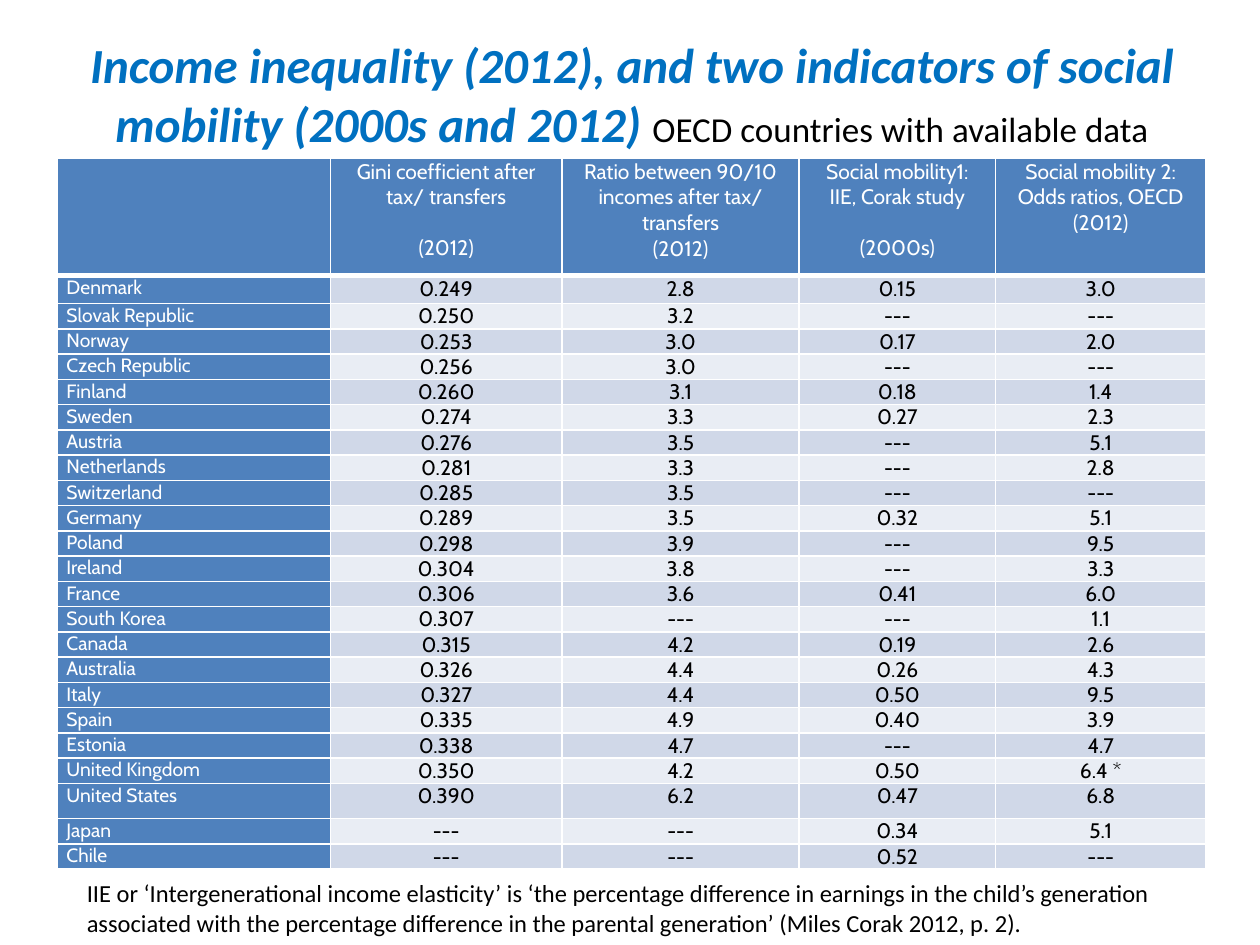
from dataclasses import dataclass

from lxml.etree import SubElement
from pptx import Presentation
from pptx.dml.color import RGBColor
from pptx.enum.text import MSO_ANCHOR, MSO_AUTO_SIZE, PP_ALIGN
from pptx.oxml.ns import qn
from pptx.util import Cm, Pt


@dataclass(frozen=True)
class Theme:
    heading_font: str = "Calibri"
    table_font: str = "Cabin"
    accent: str = "0070C0"
    black: str = "000000"
    white: str = "FFFFFF"
    header_fill: str = "4F81BD"
    bands: tuple = ("D0D8E8", "E9EDF4")
    title_size: float = 28
    subtitle_size: float = 20
    note_size: float = 14
    value_size: float = 12
    country_size: float = 11
    blank_line: float = 14.6
    rule: float = 1
    header_rule: float = 3


THEME = Theme()

TITLE = "Income inequality (2012), and two indicators of social mobility (2000s and 2012) "
SUBTITLE = "OECD countries with available data"
NOTE = (
    "IIE or ‘Intergenerational income elasticity’ is ‘the percentage difference in "
    "earnings in the child’s generation associated with the percentage difference in "
    "the parental generation’ (Miles Corak 2012, p. 2)."
)

# Lines of each column head, and whether a gap precedes the year
HEADS = [
    ([], False),
    (["Gini coefficient after tax/ transfers", "(2012)"], True),
    (["Ratio between 90/10 incomes after tax/ transfers", "(2012)"], False),
    (["Social mobility1:", "IIE, Corak study", "(2000s)"], True),
    (["Social mobility 2:", "Odds ratios, OECD", "(2012)"], False),
]
COUNTRIES = [
    ("Denmark", "0.249", "2.8", "0.15", "3.0"),
    ("Slovak Republic", "0.250", "3.2", "---", "---"),
    ("Norway", "0.253", "3.0", "0.17", "2.0"),
    ("Czech Republic", "0.256", "3.0", "---", "---"),
    ("Finland", "0.260", "3.1", "0.18", "1.4"),
    ("Sweden", "0.274", "3.3", "0.27", "2.3"),
    ("Austria", "0.276", "3.5", "---", "5.1"),
    ("Netherlands", "0.281", "3.3", "---", "2.8"),
    ("Switzerland", "0.285", "3.5", "---", "---"),
    ("Germany", "0.289", "3.5", "0.32", "5.1"),
    ("Poland", "0.298", "3.9", "---", "9.5"),
    ("Ireland", "0.304", "3.8", "---", "3.3"),
    ("France", "0.306", "3.6", "0.41", "6.0"),
    ("South Korea", "0.307", "---", "---", "1.1"),
    ("Canada", "0.315", "4.2", "0.19", "2.6"),
    ("Australia", "0.326", "4.4", "0.26", "4.3"),
    ("Italy", "0.327", "4.4", "0.50", "9.5"),
    ("Spain", "0.335", "4.9", "0.40", "3.9"),
    ("Estonia", "0.338", "4.7", "---", "4.7"),
    ("United Kingdom", "0.350", "4.2", "0.50", "6.4 *"),
    ("United States", "0.390", "6.2", "0.47", "6.8"),
    ("Japan", "---", "---", "0.34", "5.1"),
    ("Chile", "---", "---", "0.52", "---"),
]

COLUMN_WIDTHS = [5.51, 4.67, 4.78, 3.96, 4.24]
HEADER_HEIGHT, ROW_HEIGHT = 2.36, 0.48
TALL_ROWS = {"Denmark": 0.56, "United States": 0.71}


def add_run(paragraph, text, font, size, color, bold=False, italic=False):
    run = paragraph.add_run()
    run.text = text
    run.font.name = font
    run.font.size = Pt(size)
    run.font.bold = bold
    run.font.italic = italic
    run.font.color.rgb = RGBColor.from_string(color)


def place(shape, box):
    shape.left, shape.top, shape.width, shape.height = (Cm(n) for n in box)


def add_title(slide, box):
    title = slide.shapes.title
    place(title, box)
    frame = title.text_frame
    frame.word_wrap = True
    frame.auto_size = MSO_AUTO_SIZE.SHAPE_TO_FIT_TEXT
    frame.vertical_anchor = MSO_ANCHOR.MIDDLE
    line = frame.paragraphs[0]
    line.alignment = PP_ALIGN.CENTER
    add_run(line, TITLE, THEME.heading_font, THEME.title_size, THEME.accent, True, True)
    add_run(line, SUBTITLE, THEME.heading_font, THEME.subtitle_size, THEME.black)


def draw_borders(cell, top, bottom):
    properties = cell._tc.get_or_add_tcPr()
    widths = {"a:lnL": THEME.rule, "a:lnR": THEME.rule, "a:lnT": top, "a:lnB": bottom}
    for tag, width in widths.items():
        border = SubElement(properties, qn(tag), w=str(int(Pt(width))))
        SubElement(SubElement(border, qn("a:solidFill")), qn("a:srgbClr"), val=THEME.white)


def style_cell(cell, fill, top=THEME.rule, bottom=THEME.rule):
    draw_borders(cell, top, bottom)
    cell.fill.solid()
    cell.fill.fore_color.rgb = RGBColor.from_string(fill)
    cell.margin_left = cell.margin_right = Cm(0.19)
    cell.margin_top = cell.margin_bottom = 0


def fill_header(cells):
    for cell, (lines, gap) in zip(cells, HEADS):
        style_cell(cell, THEME.header_fill, bottom=THEME.header_rule)
        frame = cell.text_frame
        for index, text in enumerate(lines):
            line = frame.add_paragraph() if index else frame.paragraphs[0]
            line.alignment = PP_ALIGN.CENTER
            if gap and index == len(lines) - 1:
                line.space_before = Pt(THEME.blank_line)
            add_run(line, text, THEME.table_font, THEME.value_size, THEME.white)


def fill_country(cells, record, number):
    top = THEME.rule if number else THEME.header_rule
    for column, (cell, text) in enumerate(zip(cells, record)):
        line = cell.text_frame.paragraphs[0]
        if column:
            style_cell(cell, THEME.bands[number % 2], top)
            line.alignment = PP_ALIGN.CENTER
            add_run(line, text, THEME.table_font, THEME.value_size, THEME.black)
        else:
            style_cell(cell, THEME.header_fill, top)
            add_run(line, text, THEME.table_font, THEME.country_size, THEME.white)


def add_country_table(slide, left, top):
    heights = [HEADER_HEIGHT] + [TALL_ROWS.get(r[0], ROW_HEIGHT) for r in COUNTRIES]
    table = slide.shapes.add_table(
        len(heights), len(COLUMN_WIDTHS),
        Cm(left), Cm(top), Cm(sum(COLUMN_WIDTHS)), Cm(sum(heights)),
    ).table
    for column, width in zip(table.columns, COLUMN_WIDTHS):
        column.width = Cm(width)
    for row, height in zip(table.rows, heights):
        row.height = Cm(height)
    header, *body = table.rows
    fill_header(header.cells)
    for number, (row, record) in enumerate(zip(body, COUNTRIES)):
        fill_country(row.cells, record, number)


def add_note(slide, box):
    frame = slide.shapes.add_textbox(*(Cm(n) for n in box)).text_frame
    frame.word_wrap = True
    frame.auto_size = MSO_AUTO_SIZE.SHAPE_TO_FIT_TEXT
    add_run(frame.paragraphs[0], NOTE, THEME.heading_font, THEME.note_size, THEME.black)


def main():
    deck = Presentation()
    deck.slide_width, deck.slide_height = Cm(25.4), Cm(19.05)
    slide = deck.slides.add_slide(deck.slide_layouts[5])  # Title Only
    add_country_table(slide, 1.15, 3.2)
    add_title(slide, (1.5, 0.56, 22.48, 2.64))
    add_note(slide, (1.5, 17.58, 23.6, 1.45))
    deck.save("out.pptx")


if __name__ == "__main__":
    main()
